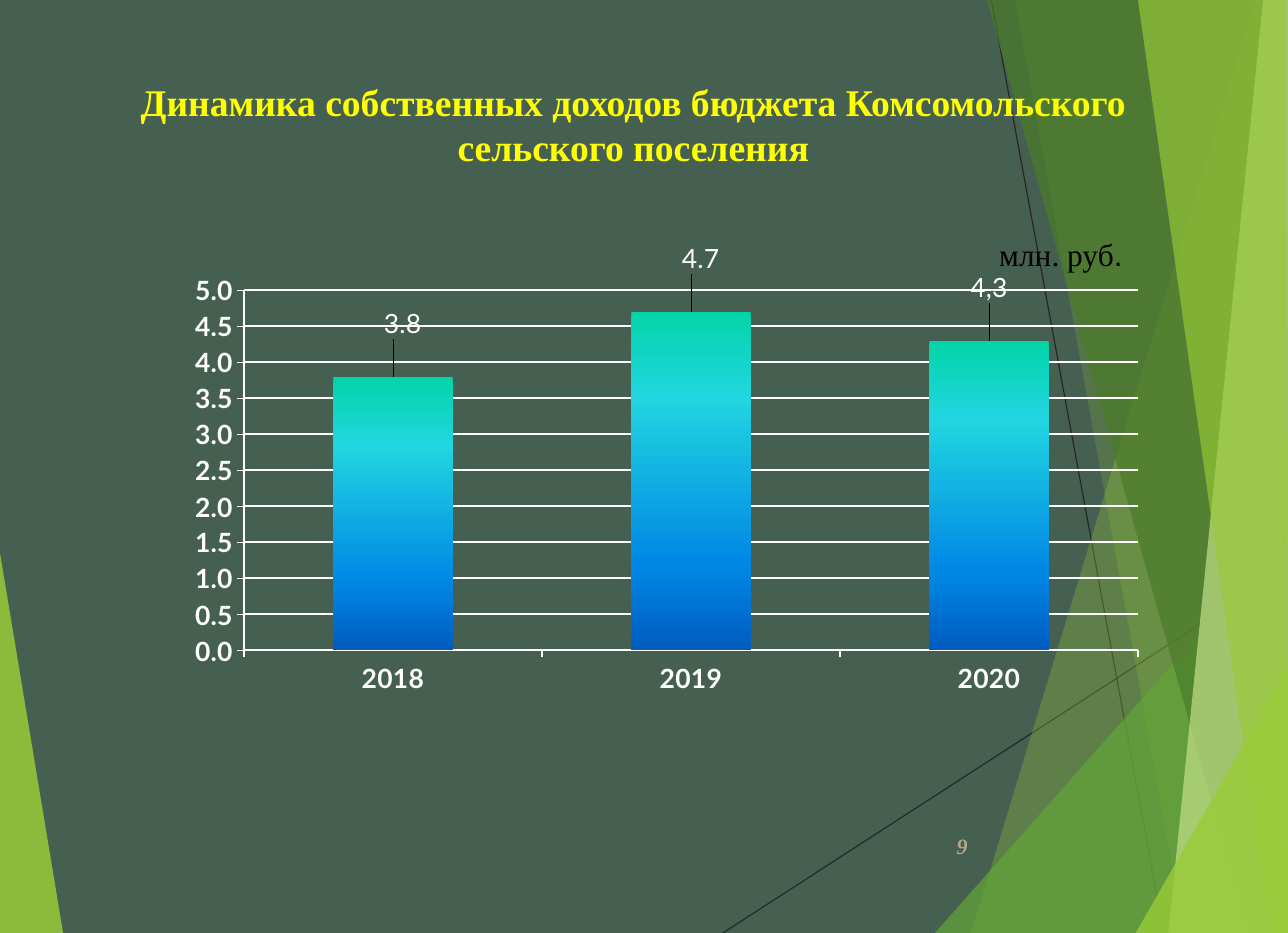
from dataclasses import dataclass

from pptx import Presentation
from pptx.chart.chart import Chart
from pptx.chart.data import CategoryChartData
from pptx.dml.color import RGBColor
from pptx.enum.chart import XL_CHART_TYPE, XL_LABEL_POSITION, XL_TICK_MARK
from pptx.enum.shapes import MSO_CONNECTOR
from pptx.enum.text import MSO_ANCHOR, MSO_AUTO_SIZE, PP_ALIGN
from pptx.oxml import parse_xml
from pptx.oxml.ns import nsdecls, qn
from pptx.oxml.xmlchemy import OxmlElement
from pptx.shapes.base import BaseShape
from pptx.slide import Slide
from pptx.util import Pt

PX = 9144
WIDTH, HEIGHT = 1142, 827
SERIF = "Times New Roman"

SLATE = RGBColor(0x45, 0x5F, 0x51)
LIME = RGBColor(0x99, 0xCB, 0x38)
GREEN = RGBColor(0x63, 0xA5, 0x37)
FOREST = RGBColor(0x4A, 0x7C, 0x29)
PALE = RGBColor(0xC2, 0xE0, 0x88)
CHARCOAL = RGBColor(0x26, 0x26, 0x26)
YELLOW = RGBColor(0xFF, 0xFF, 0x00)
SAND = RGBColor(0xB5, 0xA7, 0x88)
WHITE = RGBColor(0xFF, 0xFF, 0xFF)
BLACK = RGBColor(0x00, 0x00, 0x00)
BAR_STOPS = (
    (0, RGBColor(0x03, 0xD4, 0xA8)),
    (25, RGBColor(0x21, 0xD6, 0xE0)),
    (75, RGBColor(0x00, 0x87, 0xE6)),
    (100, RGBColor(0x00, 0x5C, 0xBF)),
)


@dataclass(frozen=True)
class Ray:
    start: tuple[int, int]
    end: tuple[int, int]


@dataclass(frozen=True)
class Facet:
    points: tuple[tuple[int, int], ...]
    color: RGBColor
    opacity: int


@dataclass(frozen=True)
class Span:
    text: str
    font: str = SERIF


@dataclass(frozen=True)
class Caption:
    place: tuple[int, int, int, int]
    spans: tuple[Span, ...]
    size: int
    color: RGBColor
    align: PP_ALIGN
    bold: bool = False
    italic: bool = False
    anchor: MSO_ANCHOR = MSO_ANCHOR.TOP


RAYS = (Ray((641, HEIGHT), (WIDTH, 503)), Ray((879, 0), (1032, HEIGHT)))
FACETS = (
    Facet(((0, 490), (56, HEIGHT), (0, HEIGHT)), LIME, 85),
    Facet(((1113, 0), (861, HEIGHT), (WIDTH, HEIGHT), (WIDTH, 0)), LIME, 30),
    Facet(((900, 0), (1050, HEIGHT), (WIDTH, HEIGHT), (WIDTH, 0)), LIME, 20),
    Facet(((829, HEIGHT), (WIDTH, 473), (WIDTH, HEIGHT)), GREEN, 72),
    Facet(((875, 0), (1107, HEIGHT), (WIDTH, HEIGHT), (WIDTH, 0)), FOREST, 70),
    Facet(((1120, 0), (1036, HEIGHT), (WIDTH, HEIGHT), (WIDTH, 0)), PALE, 70),
    Facet(((1009, 0), (1126, HEIGHT), (WIDTH, HEIGHT), (1140, 0)), LIME, 65),
    Facet(((1007, HEIGHT), (WIDTH, 591), (WIDTH, HEIGHT)), LIME, 80),
)
HEADING = Caption(
    (57, 64, 1009, 92),
    (Span("Динамика собственных доходов бюджета Комсомольского сельского поселения"),),
    24, YELLOW, PP_ALIGN.CENTER, bold=True,
)
PAGE_NUMBER = Caption(
    (805, 728, 64, 44), (Span("9"),), 14, SAND, PP_ALIGN.RIGHT,
    bold=True, italic=True, anchor=MSO_ANCHOR.MIDDLE,
)
UNIT = Caption(
    (875, 202, 152, 45), (Span("млн. руб"), Span(".", "Arial")), 20, BLACK, PP_ALIGN.LEFT
)
INCOME = {"2018": 3.8, "2019": 4.7, "2020": 4.3}
CHART_PLACE = (173, 207, 862, 420)
LABEL_SHIFTS = ((0.01, -0.07), (0.01, -0.07), (0, -0.07))


def apply(target: object, values: dict[str, object]) -> None:
    """Set each named attribute of the target."""
    for name, value in values.items():
        setattr(target, name, value)


def to_emu(lengths: tuple[int, ...]) -> list[int]:
    """Turn px lengths into EMU."""
    return [length * PX for length in lengths]


def draw_ray(page: Slide, ray: Ray) -> None:
    """Draw one thin background line."""
    line = page.shapes.add_connector(MSO_CONNECTOR.STRAIGHT, *to_emu(ray.start + ray.end))
    line.line.width = Pt(0.75)
    line.line.color.rgb = CHARCOAL
    line.element.spPr.append(OxmlElement("a:effectLst"))


def draw_facet(page: Slide, facet: Facet) -> None:
    """Draw one translucent background polygon."""
    builder = page.shapes.build_freeform(*facet.points[0], scale=PX)
    builder.add_line_segments(facet.points[1:])
    shape = builder.convert_to_shape()
    shape.shadow.inherit = False
    shape.line.fill.background()
    shape.fill.solid()
    shape.fill.fore_color.rgb = facet.color
    alpha = OxmlElement("a:alpha")
    alpha.set("val", str(facet.opacity * 1000))
    next(shape.element.iter(qn("a:srgbClr"))).append(alpha)


def write_caption(box: BaseShape, caption: Caption) -> None:
    """Place a text shape and fill it with formatted spans."""
    apply(box, dict(zip(("left", "top", "width", "height"), to_emu(caption.place))))
    frame = box.text_frame
    apply(frame, {
        "word_wrap": True, "auto_size": MSO_AUTO_SIZE.NONE, "vertical_anchor": caption.anchor,
        "margin_left": 11 * PX, "margin_right": 11 * PX,
        "margin_top": 6 * PX, "margin_bottom": 6 * PX,
    })
    para = frame.paragraphs[0]
    para.alignment = caption.align
    for span in caption.spans:
        run = para.add_run()
        run.text = span.text
        apply(run.font, {"name": span.font, "size": Pt(caption.size),
                         "bold": caption.bold, "italic": caption.italic})
        run.font.color.rgb = caption.color


def make_layout(values: dict[str, object]) -> OxmlElement:
    """Build a manual chart layout."""
    parts = "".join(f'<c:{name} val="{value}"/>' for name, value in values.items())
    return parse_xml(
        f'<c:layout {nsdecls("c")}><c:manualLayout>{parts}</c:manualLayout></c:layout>'
    )


def make_clear_fill() -> OxmlElement:
    """Build chart area properties without fill and outline."""
    return parse_xml(
        f'<c:spPr {nsdecls("c", "a")}><a:noFill/><a:ln><a:noFill/></a:ln></c:spPr>'
    )


def format_axes(chart: Chart) -> None:
    """Format both axes and the gridlines."""
    for axis in (chart.category_axis, chart.value_axis):
        apply(axis, {"major_tick_mark": XL_TICK_MARK.OUTSIDE,
                     "minor_tick_mark": XL_TICK_MARK.NONE})
        axis.format.line.color.rgb = WHITE
        axis.format.line.width = Pt(0.75)
        axis.tick_labels.font.bold = True
    scale = chart.value_axis
    apply(scale, {"minimum_scale": 0, "maximum_scale": 5, "major_unit": 0.5})
    apply(scale.tick_labels, {"number_format": "0.0", "number_format_is_linked": False})
    scale.major_gridlines.format.line.color.rgb = WHITE
    scale.major_gridlines.format.line.width = Pt(1.25)


def draw_income_chart(page: Slide) -> None:
    """Draw the income columns with raised labels."""
    data = CategoryChartData(number_format="0.0")
    data.categories = list(INCOME)
    data.add_series("Series 1", list(INCOME.values()))
    chart = page.shapes.add_chart(
        XL_CHART_TYPE.COLUMN_CLUSTERED, *to_emu(CHART_PLACE), data
    ).chart
    apply(chart, {"has_title": False, "has_legend": False})
    apply(chart.font, {"name": "Lato", "size": Pt(16.9), "bold": False})
    chart.font.color.rgb = WHITE
    format_axes(chart)
    plot = chart.plots[0]
    apply(plot, {"gap_width": 150, "vary_by_categories": False})

    columns = plot.series[0]
    columns.format.fill.gradient()
    columns.format.fill.gradient_angle = 270
    stops = next(chart.element.iter(qn("a:gsLst")))
    stops.clear()
    for position, color in BAR_STOPS:
        stops.append(parse_xml(
            f'<a:gs {nsdecls("a")} pos="{position * 1000}"><a:srgbClr val="{color}"/></a:gs>'
        ))

    labels = [columns.points[index].data_label for index in range(len(INCOME))]
    for label in labels:
        label.position = XL_LABEL_POSITION.OUTSIDE_END
    run = labels[-1].text_frame.paragraphs[0].add_run()
    run.text = "4,3"
    apply(run.font, {"name": "Lato", "size": Pt(16.9), "bold": False})
    run.font.color.rgb = WHITE
    for node, (x, y) in zip(list(chart.element.iter(qn("c:dLbl"))), LABEL_SHIFTS):
        node.find(qn("c:idx")).addnext(make_layout({"x": x, "y": y}))

    area = next(chart.element.iter(qn("c:plotArea")))
    for layout in area.findall(qn("c:layout")):
        area.remove(layout)
    area.insert(0, make_layout({
        "layoutTarget": "inner", "xMode": "edge", "yMode": "edge",
        "x": 0.05, "y": 0.12, "w": 0.92, "h": 0.76,
    }))
    area.append(make_clear_fill())
    chart.element.find(qn("c:chart")).addnext(make_clear_fill())


def main() -> None:
    """Build and save the income slide."""
    deck = Presentation()
    deck.slide_width, deck.slide_height = to_emu((WIDTH, HEIGHT))
    page = deck.slides.add_slide(deck.slide_layouts[5])
    page.background.fill.solid()
    page.background.fill.fore_color.rgb = SLATE
    for ray in RAYS:
        draw_ray(page, ray)
    for facet in FACETS:
        draw_facet(page, facet)
    write_caption(page.shapes.add_textbox(0, 0, PX, PX), PAGE_NUMBER)
    draw_income_chart(page)
    title = page.shapes.title
    page.shapes.element.append(title.element)
    write_caption(title, HEADING)
    write_caption(page.shapes.add_textbox(0, 0, PX, PX), UNIT)
    deck.save("out.pptx")


if __name__ == "__main__":
    main()
